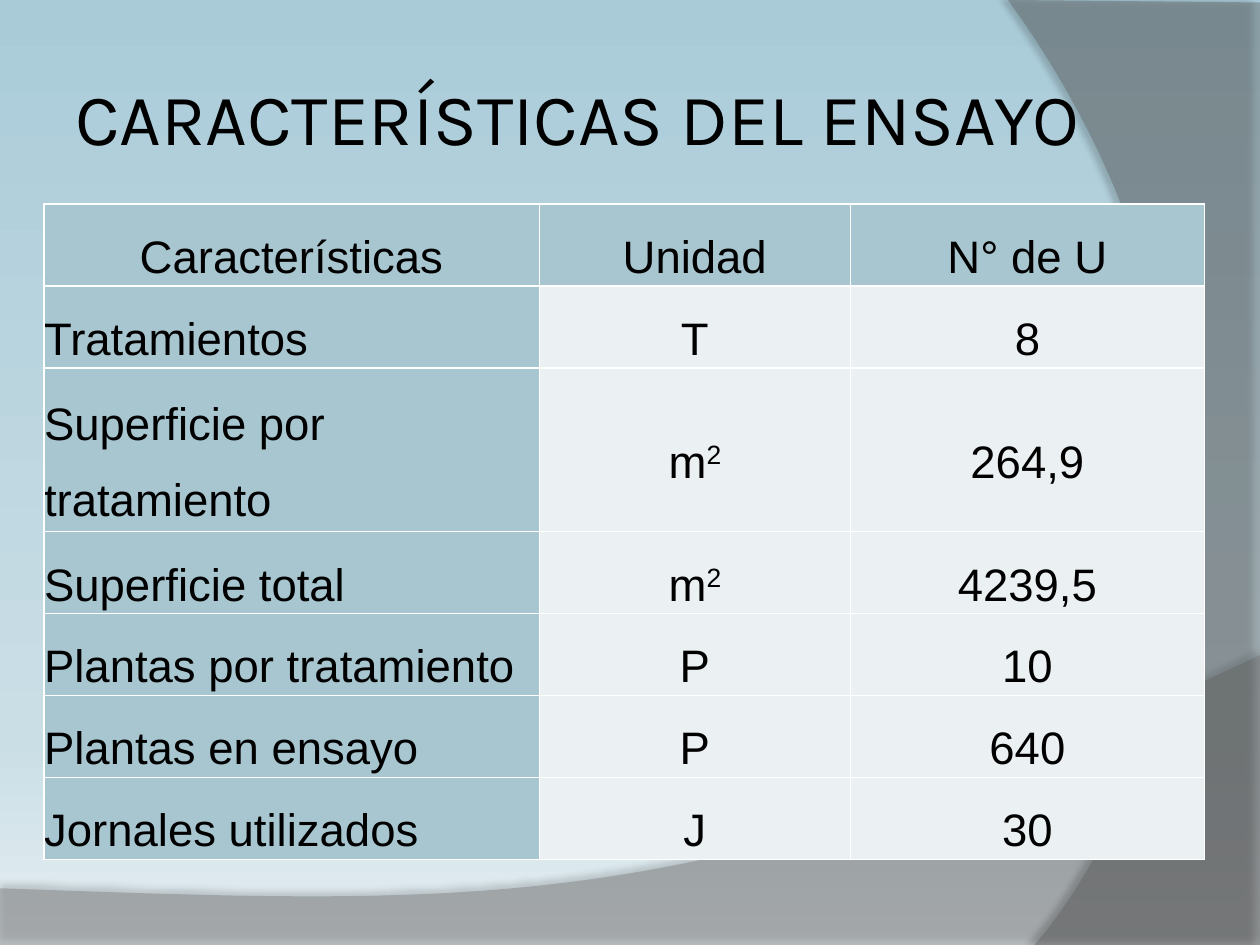
from lxml.etree import SubElement
from pptx import Presentation
from pptx.dml.color import RGBColor
from pptx.enum.text import MSO_ANCHOR, PP_ALIGN
from pptx.oxml.ns import qn
from pptx.util import Inches, Pt

# Content
TITLE = "CARACTERÍSTICAS DEL ENSAYO"
ROWS = [
    ("Características", "Unidad", "N° de U"),
    ("Tratamientos", "T", "8"),
    ("Superficie por tratamiento", "m²", "264,9"),
    ("Superficie total", "m²", "4239,5"),
    ("Plantas por tratamiento", "P", "10"),
    ("Plantas en ensayo", "P", "640"),
    ("Jornales utilizados", "J", "30"),
]
COLS = [3.93, 2.47, 2.81]
ROW_H = 0.65
COLORS = {"text": "000000", "head": "A8C6D0", "body": "EBF0F2",
          "rule": "FFFFFF", "wave": "7F7F7F", "side": "5E5E5E"}
SKY = [(0, "A9CBD8"), (78, "CADEE6"), (100, "E5EEF2")]


def rgb(name):
    return RGBColor.from_string(COLORS[name])


def add(parent, tag, **attrs):
    return SubElement(parent, qn(tag), {k: str(v) for k, v in attrs.items()})


def add_color(parent, color, alpha=None):
    node = add(parent, "a:srgbClr", val=color)
    if alpha is not None:
        add(node, "a:alpha", val=alpha * 1000)
    return node


def curve(a, b, c, d, steps=60):
    """Points along a cubic curve, without its start."""
    for i in range(1, steps + 1):
        t = i / steps
        u = 1 - t
        yield tuple(u**3 * p + 3 * u * u * t * q + 3 * u * t * t * r + t**3 * s
                    for p, q, r, s in zip(a, b, c, d))


def add_band(slide, points, color, alpha, shade):
    points = [(Inches(x), Inches(y)) for x, y in points]
    pen = slide.shapes.build_freeform(*points[0])
    pen.add_line_segments(points[1:], close=True)
    shape = pen.convert_to_shape()
    shape.fill.solid()
    shape.fill.fore_color.rgb = rgb(color)
    shape.line.fill.background()
    props = shape._element.spPr
    tint = props.find(qn("a:solidFill")).find(qn("a:srgbClr"))
    add(tint, "a:alpha", val=alpha * 1000)
    dark, blur, dist, turn = shade
    glow = add(add(props, "a:effectLst"), "a:outerShdw", blurRad=Pt(blur),
               dist=Pt(dist), dir=turn * 60000, algn="ctr", rotWithShape=0)
    add_color(glow, "000000", dark)


def style(para, size, font):
    para.font.size = Pt(size)
    para.font.name = font
    para.font.bold = False
    para.font.color.rgb = rgb("text")


def fill_cell(cell, text, head, left):
    cell.fill.solid()
    cell.fill.fore_color.rgb = rgb("head" if head else "body")
    cell.vertical_anchor = MSO_ANCHOR.MIDDLE
    cell.margin_left = cell.margin_right = 0
    cell.margin_top = cell.margin_bottom = 0
    para = cell.text_frame.paragraphs[0]
    para.alignment = PP_ALIGN.LEFT if left else PP_ALIGN.CENTER
    para.line_spacing = 1.5
    para.space_before = Pt(14)
    style(para, 26, "Arial")
    para.add_run().text = text.rstrip("²")
    if text.endswith("²"):
        power = para.add_run()
        power.text = "2"
        power._r.get_or_add_rPr().set("baseline", "30000")
    # Borders go before the fill
    props = cell._tc.get_or_add_tcPr()
    for i, side in enumerate(("a:lnL", "a:lnR", "a:lnT", "a:lnB")):
        line = add(props, side, w=Pt(1))
        add_color(add(line, "a:solidFill"), COLORS["rule"])
        props.insert(i, line)


def main():
    deck = Presentation()
    deck.slide_width, deck.slide_height = Inches(10), Inches(7.5)
    slide = deck.slides.add_slide(deck.slide_layouts[6])

    # Background
    back = slide.background.fill
    back.gradient()
    back.gradient_angle = 270
    stops = back._fill._gradFill.find(qn("a:gsLst"))
    for stop in list(stops):
        stops.remove(stop)
    for pos, color in SKY:
        add_color(add(stops, "a:gs", pos=pos * 1000), color)

    # Curved bands
    wave = [(0, 7.05), (0, 7.5), (10, 7.5), (10, 5.2)]
    wave += curve((10, 5.2), (5.59, 7.29), (3.91, 7.19), (0, 7.05))
    add_band(slide, wave, "wave", 45, (35, 4, 3.5, 270))
    side = [(10, 0.02), (10, 7.5), (8.21, 7.5)]
    side += curve((8.21, 7.5), (9.35, 6.19), (10.18, 3), (8, 0))
    add_band(slide, side, "side", 40, (45, 4, 4, 180))

    # Title
    box = slide.shapes.add_textbox(Inches(0.5), Inches(0.3),
                                   Inches(8.17), Inches(1.25))
    frame = box.text_frame
    frame.word_wrap = True
    frame.vertical_anchor = MSO_ANCHOR.MIDDLE
    frame.margin_left = frame.margin_right = Inches(0.05)
    para = frame.paragraphs[0]
    para.text = TITLE
    para.alignment = PP_ALIGN.CENTER
    style(para, 41.4, "Karla")

    # Table
    table = slide.shapes.add_table(
        len(ROWS), len(COLS), Inches(0.35), Inches(1.62),
        Inches(sum(COLS)), Inches(ROW_H * len(ROWS))).table
    table.first_row = table.horz_banding = False
    for col, width in zip(table.columns, COLS):
        col.width = Inches(width)
    for r, row in enumerate(ROWS):
        table.rows[r].height = Inches(ROW_H)
        for c, text in enumerate(row):
            fill_cell(table.cell(r, c), text, r == 0 or c == 0, r > 0 and c == 0)

    deck.save("out.pptx")


if __name__ == "__main__":
    main()
